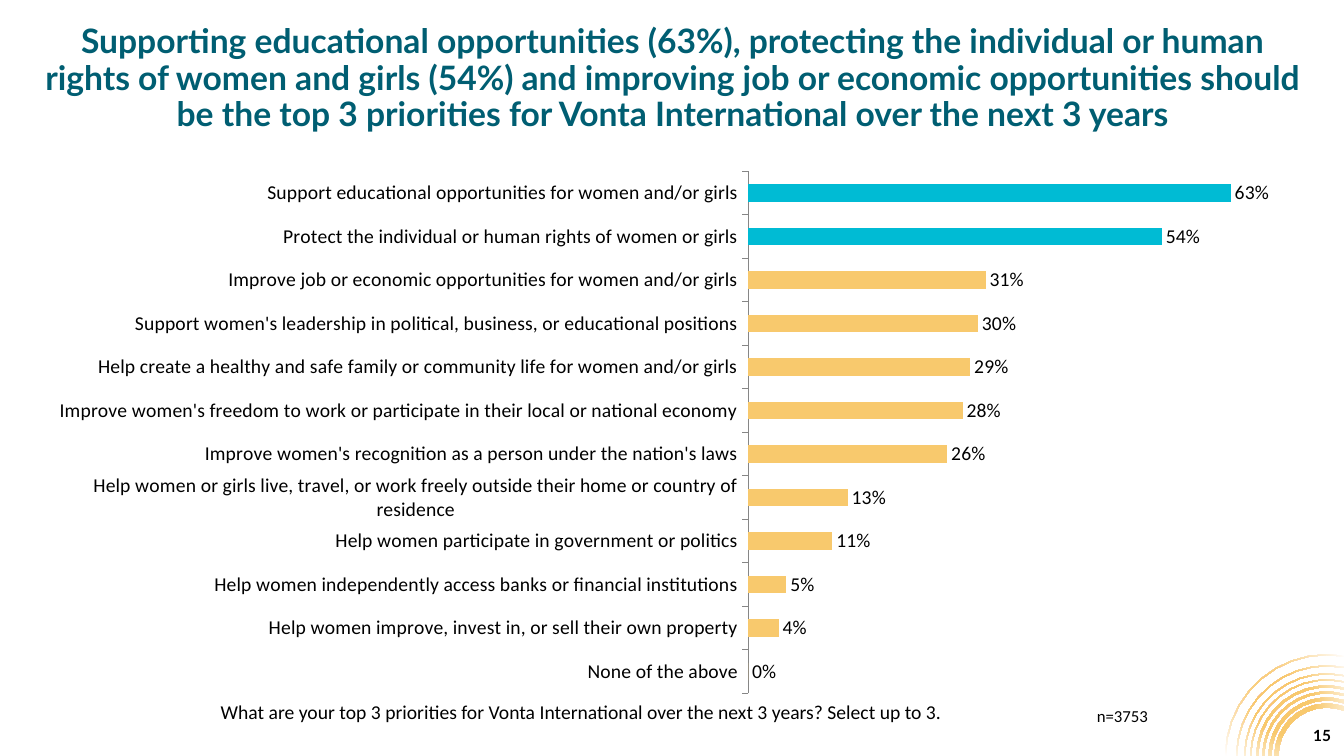
import math
from dataclasses import dataclass

import lxml.etree
import pptx
import pptx.chart.data
import pptx.dml.color
import pptx.enum.chart
import pptx.enum.text
import pptx.oxml
import pptx.oxml.ns
import pptx.util
from pptx.util import Inches

Align = pptx.enum.text.PP_ALIGN
Anchor = pptx.enum.text.MSO_ANCHOR
AutoSize = pptx.enum.text.MSO_AUTO_SIZE


@dataclass(frozen=True)
class Theme:
    title: str = "005E72"
    text: str = "000000"
    bar: str = "F8C96D"
    highlight: str = "00BBD4"
    axis: str = "868686"
    white: str = "FFFFFF"
    heading_font: str = "Lato"
    body_font: str = "Calibri"
    title_size: int = 24
    chart_size: int = 14
    note_size: int = 12
    page_size: int = 11


@dataclass(frozen=True)
class Box:
    left: float
    top: float
    width: float
    height: float


@dataclass(frozen=True)
class Label:
    text: str
    box: Box
    size: int
    font: str
    color: str
    bold: bool = False
    align: Align = Align.LEFT
    anchor: Anchor = Anchor.TOP
    spacing: float = 1.0
    fit: AutoSize = AutoSize.NONE


@dataclass(frozen=True)
class Ring:
    outer: float
    inner: float


@dataclass(frozen=True)
class Priority:
    name: str
    share: float
    top: bool = False


THEME = Theme()
SLIDE_W, SLIDE_H = 13.33, 7.5
RING_CENTER_X = 13.16
CHART = Box(0.34, 1.59, 12.66, 5.4)
PLOT = Box(7.42, 1.7, 5.32, 5.18)

RINGS = [
    Ring(0.52, 0.48), Ring(0.58, 0.55), Ring(0.64, 0.62), Ring(0.7, 0.68),
    Ring(0.76, 0.75), Ring(0.82, 0.81), Ring(0.9, 0.89), Ring(1.01, 1.0),
]

PRIORITIES = [
    Priority("Support educational opportunities for women and/or girls", 0.63, True),
    Priority("Protect the individual or human rights of women or girls", 0.54, True),
    Priority("Improve job or economic opportunities for women and/or girls", 0.31),
    Priority("Support women's leadership in political, business, or educational positions", 0.3),
    Priority("Help create a healthy and safe family or community life for women and/or girls", 0.29),
    Priority("Improve women's freedom to work or participate in their local or national economy", 0.28),
    Priority("Improve women's recognition as a person under the nation's laws", 0.26),
    Priority("Help women or girls live, travel, or work freely outside their home "
             "or country of residence", 0.13),
    Priority("Help women participate in government or politics", 0.11),
    Priority("Help women independently access banks or financial institutions", 0.05),
    Priority("Help women improve, invest in, or sell their own property", 0.04),
    Priority("None of the above", 0),
]

LABELS = [
    Label("15", Box(10.3, 7.18, 3, 0.24), THEME.page_size, THEME.heading_font, THEME.text,
          bold=True, align=Align.RIGHT, anchor=Anchor.MIDDLE),
    Label("Supporting educational opportunities (63%), protecting the individual or human "
          "rights of women and girls (54%) and improving job or economic opportunities should "
          "be the top 3 priorities for Vonta International over the next 3 years",
          Box(0.34, 0.4, 12.66, 0.77), THEME.title_size, THEME.heading_font, THEME.title,
          bold=True, align=Align.CENTER, anchor=Anchor.MIDDLE, spacing=0.9),
    Label("What are your top 3 priorities for Vonta International over the next 3 years? "
          "Select up to 3.", Box(2.09, 6.89, 8.46, 0.34),
          THEME.chart_size, THEME.body_font, THEME.text, fit=AutoSize.SHAPE_TO_FIT_TEXT),
    Label("n=3753", Box(10.78, 6.95, 1.48, 0.3),
          THEME.note_size, THEME.body_font, THEME.text, fit=AutoSize.SHAPE_TO_FIT_TEXT),
]


def rgb(color: str) -> pptx.dml.color.RGBColor:
    return pptx.dml.color.RGBColor.from_string(color)


def emu(box: Box) -> list[int]:
    return [Inches(v) for v in (box.left, box.top, box.width, box.height)]


def style_font(font, size: int, name: str, color: str, bold: bool = False) -> None:
    font.size = pptx.util.Pt(size)
    font.name = name
    font.bold = bold
    font.color.rgb = rgb(color)


def add_label(slide, label: Label) -> None:
    tf = slide.shapes.add_textbox(*emu(label.box)).text_frame
    tf.word_wrap = True
    tf.auto_size = label.fit
    tf.vertical_anchor = label.anchor
    p = tf.paragraphs[0]
    p.text = label.text
    p.alignment = label.align
    p.line_spacing = label.spacing
    style_font(p.font, label.size, label.font, label.color, label.bold)


def ring_points(ring: Ring, steps: int = 10) -> list[tuple[int, int]]:
    """Outline of a ring from the bottom slide edge round to the right one."""
    points = []
    for radius in (ring.outer, ring.inner):
        end = math.acos((SLIDE_W - RING_CENTER_X) / radius)
        angles = [math.pi + (end - math.pi) * i / steps for i in range(steps + 1)]
        arc = [(Inches(RING_CENTER_X + radius * math.cos(a)),
                Inches(SLIDE_H - radius * math.sin(a))) for a in angles]
        points += arc if radius == ring.outer else arc[::-1]
    return points


def add_rings(slide) -> None:
    outlines = [ring_points(ring) for ring in RINGS]
    builder = slide.shapes.build_freeform(*outlines[0][0])
    builder.add_line_segments(outlines[0][1:], close=True)
    for outline in outlines[1:]:
        builder.move_to(*outline[0])
        builder.add_line_segments(outline[1:], close=True)
    sp = builder.convert_to_shape()
    sp.shadow.inherit = False
    sp.line.fill.background()
    sp.fill.solid()
    solid = sp.element.spPr.find(pptx.oxml.ns.qn("a:solidFill"))
    gradient = pptx.oxml.parse_xml(
        f'<a:gradFill {pptx.oxml.ns.nsdecls("a")} rotWithShape="1"><a:gsLst>'
        f'<a:gs pos="37000"><a:srgbClr val="{THEME.bar}"/></a:gs>'
        f'<a:gs pos="100000"><a:srgbClr val="{THEME.white}"/></a:gs></a:gsLst>'
        '<a:path path="circle"><a:fillToRect l="50000" t="50000" r="50000" b="50000"/>'
        '</a:path></a:gradFill>')
    solid.getparent().replace(solid, gradient)


def place_plot(chart) -> None:
    """Fix the inner plot area, given as fractions of the chart frame."""
    area = chart.element.find(".//" + pptx.oxml.ns.qn("c:plotArea"))
    for old in area.findall(pptx.oxml.ns.qn("c:layout")):
        area.remove(old)
    layout = lxml.etree.Element(pptx.oxml.ns.qn("c:layout"))
    manual = lxml.etree.SubElement(layout, pptx.oxml.ns.qn("c:manualLayout"))
    settings = {"layoutTarget": "inner", "xMode": "edge", "yMode": "edge",
                "x": (PLOT.left - CHART.left) / CHART.width,
                "y": (PLOT.top - CHART.top) / CHART.height,
                "w": PLOT.width / CHART.width, "h": PLOT.height / CHART.height}
    for tag, value in settings.items():
        lxml.etree.SubElement(manual, pptx.oxml.ns.qn(f"c:{tag}"), val=str(value))
    area.insert(0, layout)


def add_priority_chart(slide) -> None:
    rows = PRIORITIES[::-1]
    data = pptx.chart.data.CategoryChartData(number_format="0%")
    data.categories = [row.name for row in rows]
    data.add_series("Series 1", [row.share for row in rows])
    chart = slide.shapes.add_chart(
        pptx.enum.chart.XL_CHART_TYPE.BAR_CLUSTERED, *emu(CHART), data).chart
    chart.has_legend = False
    chart.has_title = False
    style_font(chart.font, THEME.chart_size, THEME.body_font, THEME.text)
    place_plot(chart)

    axis = chart.category_axis
    axis.major_tick_mark = pptx.enum.chart.XL_TICK_MARK.OUTSIDE
    axis.format.line.color.rgb = rgb(THEME.axis)
    values = chart.value_axis
    values.visible = False
    values.has_major_gridlines = False
    values.minimum_scale, values.maximum_scale = 0, 0.7

    plot = chart.plots[0]
    plot.gap_width = 150
    plot.vary_by_categories = False
    series = plot.series[0]
    bars = [(series, THEME.bar)]
    bars += [(series.points[i], THEME.highlight) for i, row in enumerate(rows) if row.top]
    for bar, color in bars:
        bar.format.fill.solid()
        bar.format.fill.fore_color.rgb = rgb(color)
    labels = series.data_labels
    labels.show_value = True
    labels.number_format = "0%"
    labels.number_format_is_linked = False
    labels.position = pptx.enum.chart.XL_LABEL_POSITION.OUTSIDE_END


def main() -> None:
    prs = pptx.Presentation()
    prs.slide_width, prs.slide_height = Inches(SLIDE_W), Inches(SLIDE_H)
    slide = prs.slides.add_slide(prs.slide_layouts[6])
    add_rings(slide)
    add_priority_chart(slide)
    for label in LABELS:
        add_label(slide, label)
    prs.save("out.pptx")


if __name__ == "__main__":
    main()
